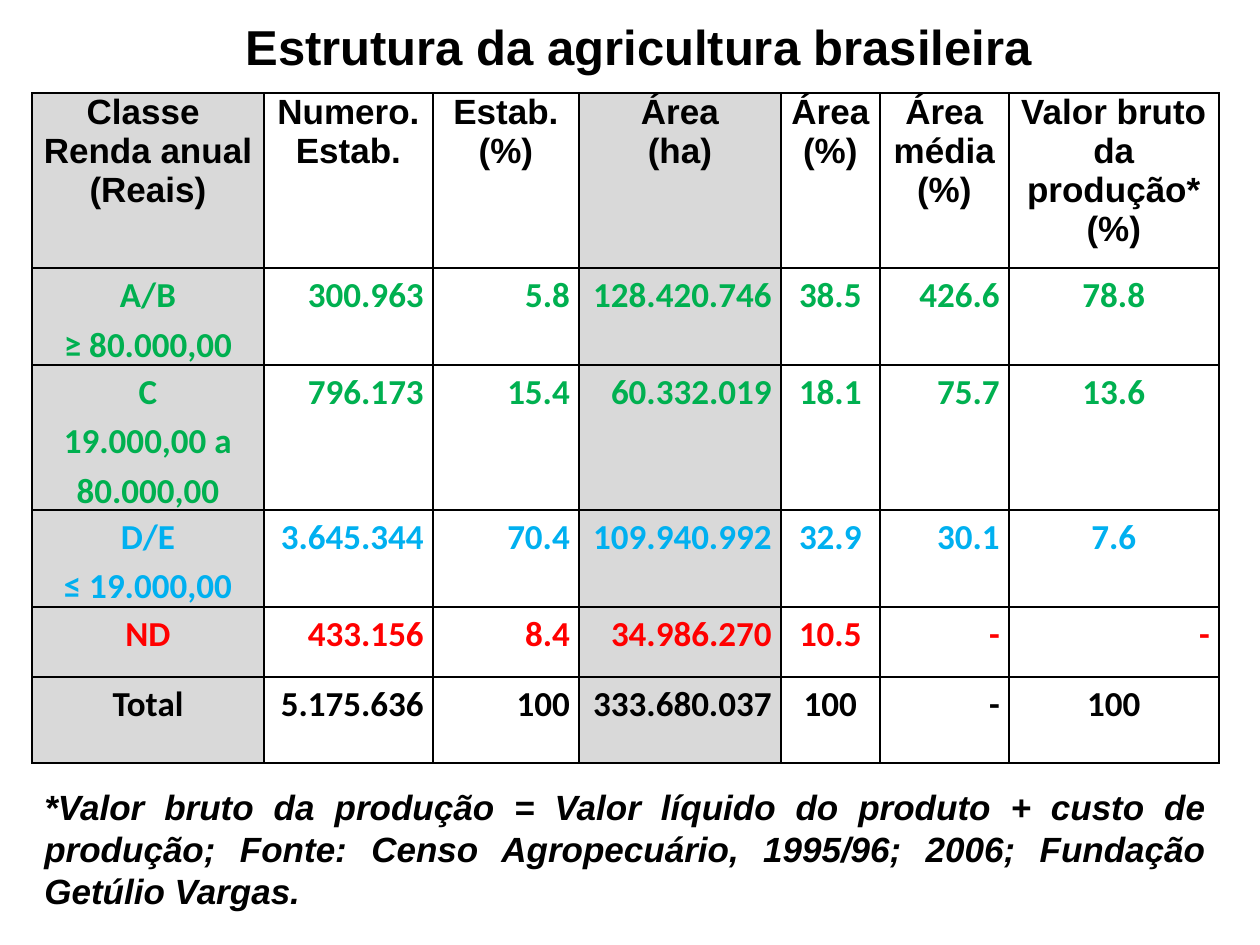
from pptx import Presentation
from pptx.dml.color import RGBColor
from pptx.enum.text import MSO_ANCHOR as Anchor, MSO_AUTO_SIZE as AutoSize, PP_ALIGN as Align
from pptx.oxml import parse_xml
from pptx.oxml.ns import nsdecls
from pptx.util import Pt

PX = 914400 // 126  # one px in EMU
BLACK = RGBColor(0x00, 0x00, 0x00)
GREY = RGBColor(0xD9, 0xD9, 0xD9)
GREEN = RGBColor(0x00, 0xB0, 0x50)
BLUE = RGBColor(0x00, 0xB0, 0xF0)
RED = RGBColor(0xFF, 0x00, 0x00)


def add_text(para, text, size, font="Arial", color=BLACK, align=Align.LEFT, italic=False):
    para.alignment = align
    span = para.add_run()
    span.text = text
    span.font.name, span.font.size = font, Pt(size)
    span.font.bold, span.font.italic = True, italic
    span.font.color.rgb = color


def add_borders(cell):
    props = cell._tc.get_or_add_tcPr()
    for index, side in enumerate(("lnL", "lnR", "lnT", "lnB")):
        props.insert(index, parse_xml(
            f'<a:{side} {nsdecls("a")} w="12700"><a:solidFill>'
            f'<a:srgbClr val="{BLACK}"/></a:solidFill></a:{side}>'))


deck = Presentation()
deck.slide_width, deck.slide_height = 1260 * PX, 945 * PX
page = deck.slides.add_slide(deck.slide_layouts[5])

# Title
title = page.shapes.title
title.left, title.top, title.width, title.height = 233 * PX, 10 * PX, 815 * PX, 72 * PX
title.text_frame.word_wrap = False
title.text_frame.auto_size = AutoSize.SHAPE_TO_FIT_TEXT
title.text_frame.vertical_anchor = Anchor.TOP
add_text(title.text_frame.paragraphs[0], "Estrutura da agricultura brasileira", 28)

# Table: each line of a cell is its own paragraph
COLUMNS = [232, 169, 146, 202, 99, 129, 210]
HEIGHTS = [175, 97, 145, 97, 70, 86]
SHADED = (0, 3)
RIGHT_ALIGNED = (1, 2, 3, 5)
ROWS = [
    (BLACK, ["Classe \nRenda anual\n(Reais)", "Numero. Estab.", "Estab.\n(%)", "Área\n(ha)",
             "Área\n(%)", "Área\nmédia\n(%)", "Valor bruto da produção*\n(%)"]),
    (GREEN, ["A/B\n≥ 80.000,00", "300.963", "5.8", "128.420.746", "38.5", "426.6", "78.8"]),
    (GREEN, ["C\n19.000,00 a 80.000,00", "796.173", "15.4", "60.332.019", "18.1", "75.7", "13.6"]),
    (BLUE, ["D/E\n≤ 19.000,00", "3.645.344", "70.4", "109.940.992", "32.9", "30.1", "7.6"]),
    (RED, ["ND", "433.156", "8.4", "34.986.270", "10.5", "-", "-"]),
    (BLACK, ["Total", "5.175.636", "100", "333.680.037", "100", "-", "100"]),
]
table = page.shapes.add_table(len(ROWS), len(COLUMNS), 32 * PX, 93 * PX,
                              sum(COLUMNS) * PX, sum(HEIGHTS) * PX).table
table.first_row = table.horz_banding = False
for column, width in zip(table.columns, COLUMNS):
    column.width = width * PX

for r, (color, values) in enumerate(ROWS):
    table.rows[r].height = HEIGHTS[r] * PX
    for c, value in enumerate(values):
        cell = table.cell(r, c)
        cell.margin_left = cell.margin_right = 9 * PX
        cell.margin_top = cell.margin_bottom = 0
        if c in SHADED:
            cell.fill.solid()
            cell.fill.fore_color.rgb = GREY
        else:
            cell.fill.background()
        add_borders(cell)
        to_right = r > 0 and (c in RIGHT_ALIGNED or value == "-")
        for n, line in enumerate(value.split("\n")):
            para = cell.text_frame.paragraphs[0] if n == 0 else cell.text_frame.add_paragraph()
            if r > 0:
                para.line_spacing = 1.15
            add_text(para, line, 20, "Calibri" if r > 0 else "Arial", color,
                     Align.RIGHT if to_right else Align.CENTER)

# Footnote
note = page.shapes.add_textbox(32 * PX, 779 * PX, 1187 * PX, 140 * PX).text_frame
note.word_wrap = True
note.auto_size = AutoSize.SHAPE_TO_FIT_TEXT
note.vertical_anchor = Anchor.MIDDLE
add_text(note.paragraphs[0],
         "*Valor bruto da produção = Valor líquido do produto + custo de produção; "
         "Fonte: Censo Agropecuário, 1995/96; 2006; Fundação Getúlio Vargas.",
         20, align=Align.JUSTIFY, italic=True)

deck.save("out.pptx")
